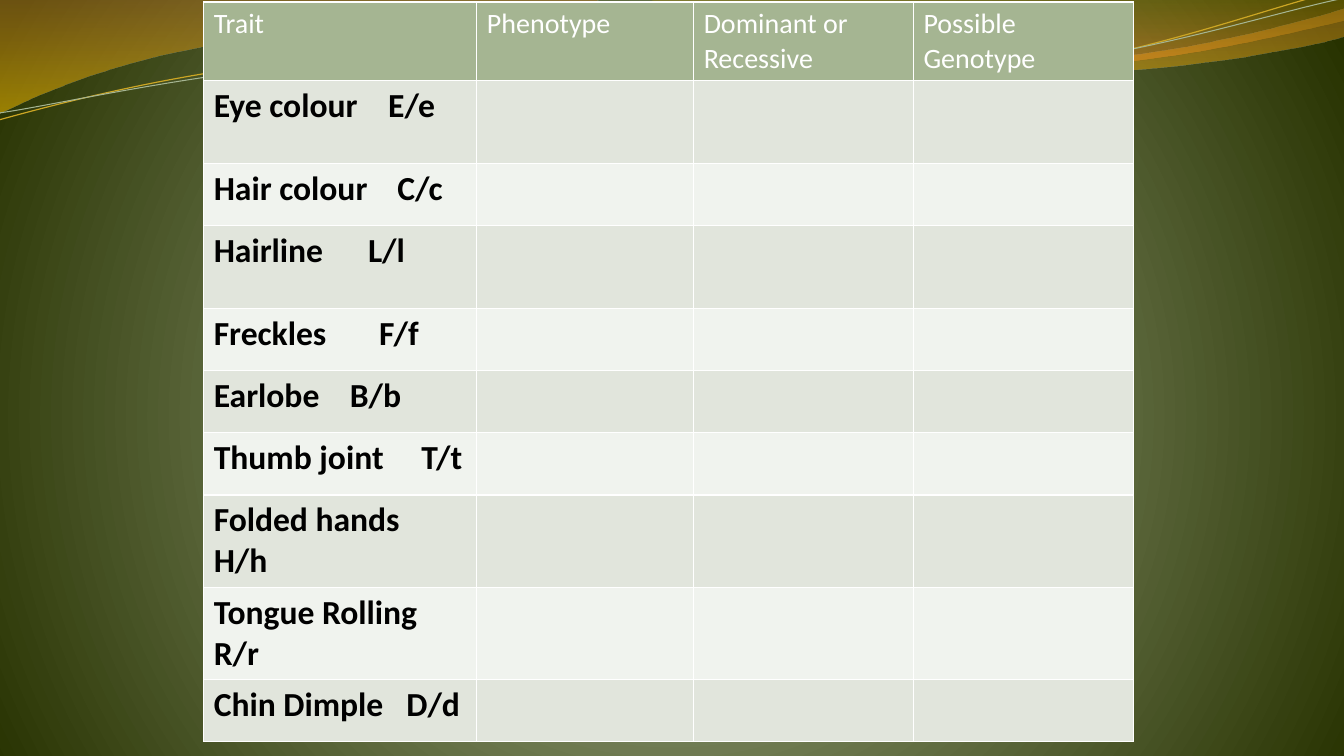
from copy import deepcopy
from itertools import product
from math import cos, radians, sin
from lxml.etree import SubElement
from pptx import Presentation
from pptx.dml.color import RGBColor
from pptx.oxml import parse_xml
from pptx.oxml.ns import nsdecls, qn
from pptx.util import Inches, Pt

C = {
    "white": "FFFFFF", "black": "000000", "sage": "A5B592",
    "band": "E1E5DC", "pale": "F0F3EE", "gold": "CCA624",
    "glow": "8F9B72", "olive": "86926C", "forest": "273200",
    "copper": "C07A28", "amber": "F7BF00", "bronze": "C09709", "orange": "F59320",
}
RGB = {name: RGBColor.from_string(value) for name, value in C.items()}


def put_text(cell, text, size=24, color="black", bold=True, stop=None):
    p = cell.text_frame.paragraphs[0]
    r = p.add_run()
    r.text = text
    r.font.name, r.font.size, r.font.bold = "Calibri", Pt(size), bold
    r.font.color.rgb = RGB[color]
    if stop:
        tabs = SubElement(p._p.get_or_add_pPr(), qn("a:tabLst"))
        SubElement(tabs, qn("a:tab"), pos=str(Inches(stop)), algn="l")


def draw_curve(shapes, start, segments, closed):
    pts = [pt for seg in segments for pt in zip(seg[::2], seg[1::2])]
    fb = shapes.build_freeform(Inches(start[0]), Inches(start[1]))
    fb.add_line_segments([(Inches(x), Inches(y)) for x, y in pts], close=closed)
    sp = fb.convert_to_shape()
    sp.shadow.inherit = False
    lines = iter(list(sp._element.iter(qn("a:lnTo"))))
    for seg in segments:
        first = next(lines)
        if len(seg) == 6:
            first.tag = qn("a:cubicBezTo")
            for _ in range(2):
                line = next(lines)
                first.append(line[0])
                line.getparent().remove(line)
    return sp


prs = Presentation()
prs.slide_width, prs.slide_height = Inches(13.33), Inches(7.5)
s = prs.slides.add_slide(prs.slide_layouts[6])

fill = s.background.fill
fill.gradient()
grad = s._element.find(".//" + qn("a:gradFill"))
gs_list = grad.find(qn("a:gsLst"))
gs_list.append(deepcopy(gs_list[-1]))
for stop, (pos, color) in zip(fill.gradient_stops, [(0, "glow"), (0.25, "olive"), (1, "forest")]):
    stop.position, stop.color.rgb = pos, RGB[color]
grad.replace(grad.find(qn("a:lin")), parse_xml(
    f'<a:path {nsdecls("a")} path="circle">'
    '<a:fillToRect l="10000" t="110000" r="10000" b="100000"/></a:path>'))

ribbons = [
    ((-0.01, 0), [
        (5.87, -0.01), (6.34, 0.17, 8.85, 0.63, 10.11, 0.63),
        (11.38, 0.63, 12.78, 0.26, 13.33, 0.09), (13.35, 0.36),
        (13.11, 0.44, 11.6, 0.76, 9.94, 0.75), (8.29, 0.75, 5.09, 0.28, 3.43, 0.34),
        (1.72, 0.36, 0.61, 0.83, -0.01, 1.13), (-0.01, 0),
    ], [(0, "copper", 45), (1, "amber", 55)]),
    ((6.39, -0.01), [
        (6.79, 0.11, 9.09, 0.62, 10.25, 0.65),
        (11.41, 0.69, 12.82, 0.32, 13.33, 0.21), (13.33, 0), (6.39, -0.01),
    ], [(0, "bronze", 30), (0.8, "orange", 45)]),
]
for start, segments, stops in ribbons:
    sp = draw_curve(s.shapes, start, segments, True)
    sp.line.fill.background()
    sp.fill.gradient()
    sp.fill.gradient_angle = 270
    for stop, (pos, color, _) in zip(sp.fill.gradient_stops, stops):
        stop.position, stop.color.rgb = pos, RGB[color]
    for clr, (_, _, alpha) in zip(sp._element.spPr.iter(qn("a:srgbClr")), stops):
        SubElement(clr, qn("a:alpha"), val=str(alpha * 1000))

waves = [
    ((6.65, 0.57), [
        (-0.01, 1.19), (0.64, 1.01, 2.11, 0.62, 3.69, 0.55),
        (5.27, 0.48, 7.9, 0.87, 9.5, 0.76), (11.1, 0.66, 12.52, 0.08, 13.31, -0.1),
    ], "gold", 0.85),
    ((6.67, 0.59), [
        (0, 1.12), (0.63, 1.03, 2.18, 0.66, 3.78, 0.59),
        (5.37, 0.53, 7.96, 0.82, 9.55, 0.72), (11.15, 0.62, 12.55, 0.14, 13.34, -0.02),
    ], "sage", 0.75),
]
tilt = 2.7
cos_t, sin_t = cos(radians(tilt)), sin(radians(tilt))
for (cx, cy), segments, color, width in waves:
    level = []
    for seg in segments:
        flat = []
        for x, y in zip(seg[::2], seg[1::2]):
            dx, dy = x - cx, y - cy
            flat += [cx + dx * cos_t - dy * sin_t, cy + dx * sin_t + dy * cos_t]
        level.append(flat)
    sp = draw_curve(s.shapes, level[0], level[1:], False)
    sp.rotation = 360 - tilt
    sp.fill.background()
    sp.line.color.rgb, sp.line.width = RGB[color], Pt(width)

headers = ["Trait", "Phenotype", "Dominant or Recessive", "Possible Genotype"]
low = 7.4 / 12
high = low * 4 / 3
traits = [
    ("Eye colour\tE/e", high, 1.73),
    ("Hair colour\tC/c", low, 1.82),
    ("Hairline\tL/l", high, 1.53),
    ("Freckles\tF/f", low, 1.64),
    ("Earlobe\tB/b", low, 1.35),
    ("Thumb joint\tT/t", low, 2.06),
    ("Folded hands\tH/h", high, 2.3),
    ("Tongue Rolling\tR/r", high, 2.3),
    ("Chin Dimple\tD/d", low, 1.91),
]
widths = [2.71, 2.15, 2.18, 2.18]
heights = [0.66] + [height for _, height, _ in traits]
frame = s.shapes.add_table(len(heights), len(widths), Inches(2.02), Inches(0.02),
                           Inches(9.21), Inches(7.28))
tbl = frame.table
tbl.first_row = tbl.horz_banding = False
for col, width in zip(tbl.columns, widths):
    col.width = Inches(width)
for row, height in zip(tbl.rows, heights):
    row.height = Inches(height)
frame.width, frame.height = Inches(9.21), Inches(7.28)

for i, j in product(range(len(heights)), range(len(widths))):
    cell = tbl.cell(i, j)
    tcPr = cell._tc.get_or_add_tcPr()
    for side in ("lnL", "lnR", "lnT", "lnB"):
        ln = SubElement(tcPr, qn("a:" + side), w=str(Pt(1)))
        SubElement(SubElement(ln, qn("a:solidFill")), qn("a:srgbClr"), val=C["white"])
    cell.fill.solid()
    cell.fill.fore_color.rgb = RGB["sage" if i == 0 else "band" if i % 2 else "pale"]
    if i == 0:
        put_text(cell, headers[j], size=20, color="white", bold=False)
    elif j == 0:
        text, _, stop = traits[i - 1]
        put_text(cell, text, stop=stop)

prs.save("out.pptx")
